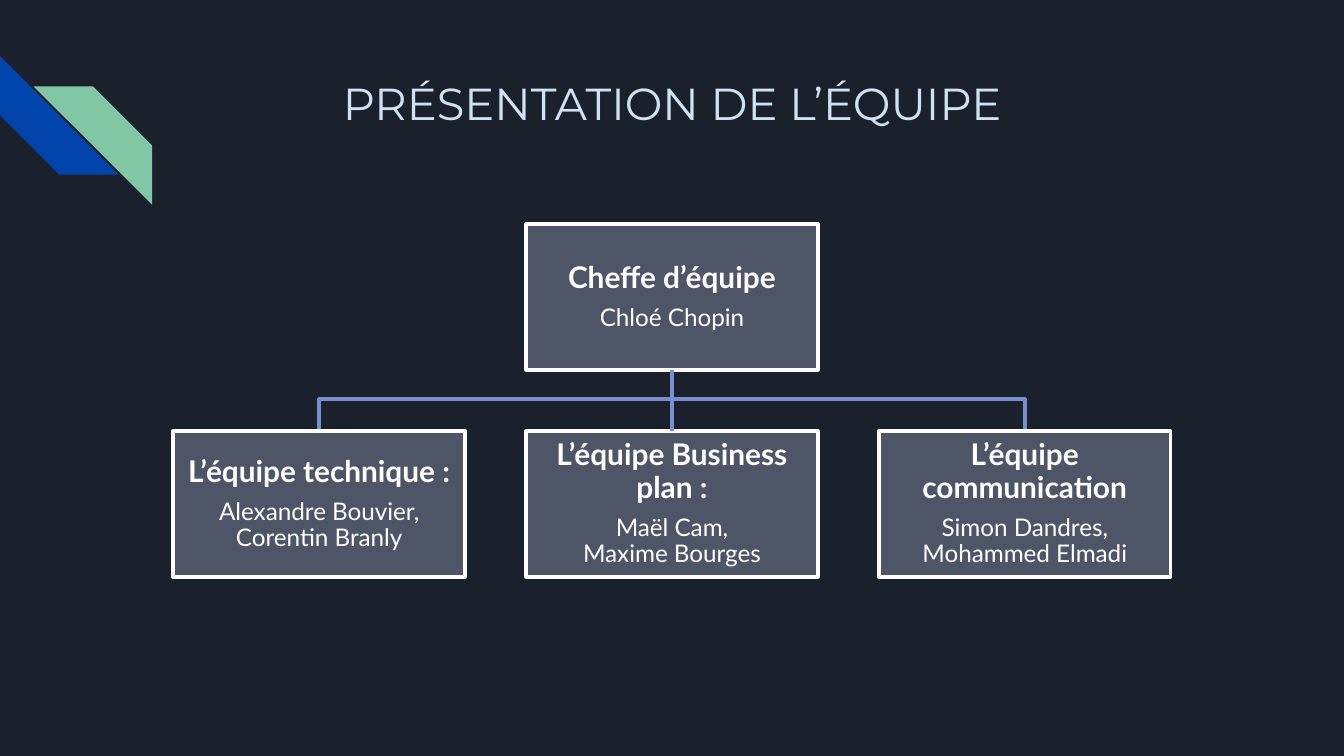
"""Build the team presentation slide with its organisation chart."""
from dataclasses import dataclass

from lxml.etree import SubElement
from pptx import Presentation
from pptx.dml.color import RGBColor
from pptx.enum.shapes import MSO_CONNECTOR, MSO_SHAPE
from pptx.enum.text import MSO_ANCHOR, MSO_AUTO_SIZE, PP_ALIGN
from pptx.oxml.ns import qn
from pptx.shapes.autoshape import Shape
from pptx.slide import Slide
from pptx.text.text import Font
from pptx.util import Pt

COLORS = {
    "background": "1B212C",
    "blue": "0145AC",
    "green": "82C7A5",
    "title": "CFE2F3",
    "branch": "7890CD",
    "box": "4E5567",
    "white": "FFFFFF",
}
SLIDE_WIDTH, SLIDE_HEIGHT = 720, 405
BOX_WIDTH, BOX_HEIGHT = 156.2, 78.1
GAP = 32.8
LEAD_TOP = 120
TEAM_TOP = LEAD_TOP + BOX_HEIGHT + GAP
CENTER = SLIDE_WIDTH / 2
STRIPE_SIZE = 63.5


@dataclass(frozen=True)
class Stripe:
    left: float
    top: float
    rotation: float
    color: str


@dataclass(frozen=True)
class Group:
    column: int
    top: float
    role: str
    members: tuple[str, ...]

    @property
    def center(self) -> float:
        return CENTER + self.column * (BOX_WIDTH + GAP)


STRIPES = [Stripe(0, 30, 270, "blue"), Stripe(18, 46.3, 90, "green")]
LEAD = Group(0, LEAD_TOP, "Cheffe d’équipe", ("Chloé Chopin",))
TEAMS = [
    Group(-1, TEAM_TOP, "L’équipe technique :", ("Alexandre Bouvier, Corentin Branly",)),
    Group(0, TEAM_TOP, "L’équipe Business plan :", ("Maël Cam,", "Maxime Bourges")),
    Group(1, TEAM_TOP, "L’équipe communication", ("Simon Dandres, Mohammed Elmadi",)),
]


def color(name: str) -> RGBColor:
    return RGBColor.from_string(COLORS[name])


def style_font(font: Font, name: str, size: float, color_name: str, bold: bool = False) -> None:
    font.name = name
    font.size = Pt(size)
    font.bold = bold
    font.color.rgb = color(color_name)


def draw_stripe(slide: Slide, stripe: Stripe) -> None:
    band = slide.shapes.add_shape(
        MSO_SHAPE.DIAGONAL_STRIPE, Pt(stripe.left), Pt(stripe.top), Pt(STRIPE_SIZE), Pt(STRIPE_SIZE)
    )
    band.rotation = stripe.rotation
    band.shadow.inherit = False
    band.fill.solid()
    band.fill.fore_color.rgb = color(stripe.color)
    band.line.fill.background()


def write_title(slide: Slide, wording: str) -> None:
    title = slide.shapes.title
    title.left, title.top, title.width, title.height = Pt(82.8), Pt(33.1), Pt(554.4), Pt(72)
    frame = title.text_frame
    frame.text = wording
    frame.word_wrap = True
    frame.auto_size = MSO_AUTO_SIZE.NONE
    frame.vertical_anchor = MSO_ANCHOR.TOP
    frame.margin_left = frame.margin_right = frame.margin_top = frame.margin_bottom = Pt(7.2)
    heading = frame.paragraphs[0]
    heading.alignment = PP_ALIGN.CENTER
    style_font(heading.runs[0].font, "Montserrat", 24, "title")


def draw_group(slide: Slide, group: Group) -> Shape:
    box = slide.shapes.add_shape(
        MSO_SHAPE.RECTANGLE,
        Pt(group.center - BOX_WIDTH / 2), Pt(group.top), Pt(BOX_WIDTH), Pt(BOX_HEIGHT),
    )
    box.shadow.inherit = False
    box.fill.solid()
    box.fill.fore_color.rgb = color("box")
    box.line.color.rgb = color("white")
    box.line.width = Pt(2)
    frame = box.text_frame
    frame.text = "\n".join((group.role, *group.members))
    frame.word_wrap = True
    frame.vertical_anchor = MSO_ANCHOR.MIDDLE
    frame.margin_left = frame.margin_right = frame.margin_top = frame.margin_bottom = Pt(0.8)
    for index, entry in enumerate(frame.paragraphs):
        is_role = index == 0
        entry.alignment = PP_ALIGN.CENTER
        entry.line_spacing = 0.9
        entry.space_after = Pt(5.6 if is_role else 0)
        style_font(entry.runs[0].font, "Lato", 16 if is_role else 13, "white", is_role)
    return box


def draw_bent_branch(slide: Slide, group: Group) -> None:
    bend = TEAM_TOP - GAP / 2
    builder = slide.shapes.build_freeform(CENTER, TEAM_TOP - GAP, scale=Pt(1))
    builder.add_line_segments(
        [(CENTER, bend), (group.center, bend), (group.center, TEAM_TOP)], close=False
    )
    branch = builder.convert_to_shape()
    branch.shadow.inherit = False
    branch.fill.background()
    branch.line.color.rgb = color("branch")
    branch.line.width = Pt(2)


def draw_trunk(slide: Slide, lead_box: Shape, team_box: Shape) -> None:
    trunk = slide.shapes.add_connector(
        MSO_CONNECTOR.STRAIGHT, Pt(CENTER), Pt(TEAM_TOP - GAP), Pt(CENTER), Pt(TEAM_TOP)
    )
    trunk.begin_connect(lead_box, 2)
    trunk.end_connect(team_box, 0)
    trunk.line.color.rgb = color("branch")
    trunk.line.width = Pt(2)
    SubElement(trunk.element.spPr, qn("a:effectLst"))


def main() -> None:
    presentation = Presentation()
    presentation.slide_width, presentation.slide_height = Pt(SLIDE_WIDTH), Pt(SLIDE_HEIGHT)
    slide = presentation.slides.add_slide(presentation.slide_layouts[5])
    slide.background.fill.solid()
    slide.background.fill.fore_color.rgb = color("background")

    for stripe in STRIPES:
        draw_stripe(slide, stripe)
    write_title(slide, "PRÉSENTATION DE L’ÉQUIPE")
    for team in TEAMS:
        if team.column != LEAD.column:
            draw_bent_branch(slide, team)
    lead_box = draw_group(slide, LEAD)
    team_boxes = {team.column: draw_group(slide, team) for team in TEAMS}
    draw_trunk(slide, lead_box, team_boxes[LEAD.column])

    presentation.save("out.pptx")


if __name__ == "__main__":
    main()
